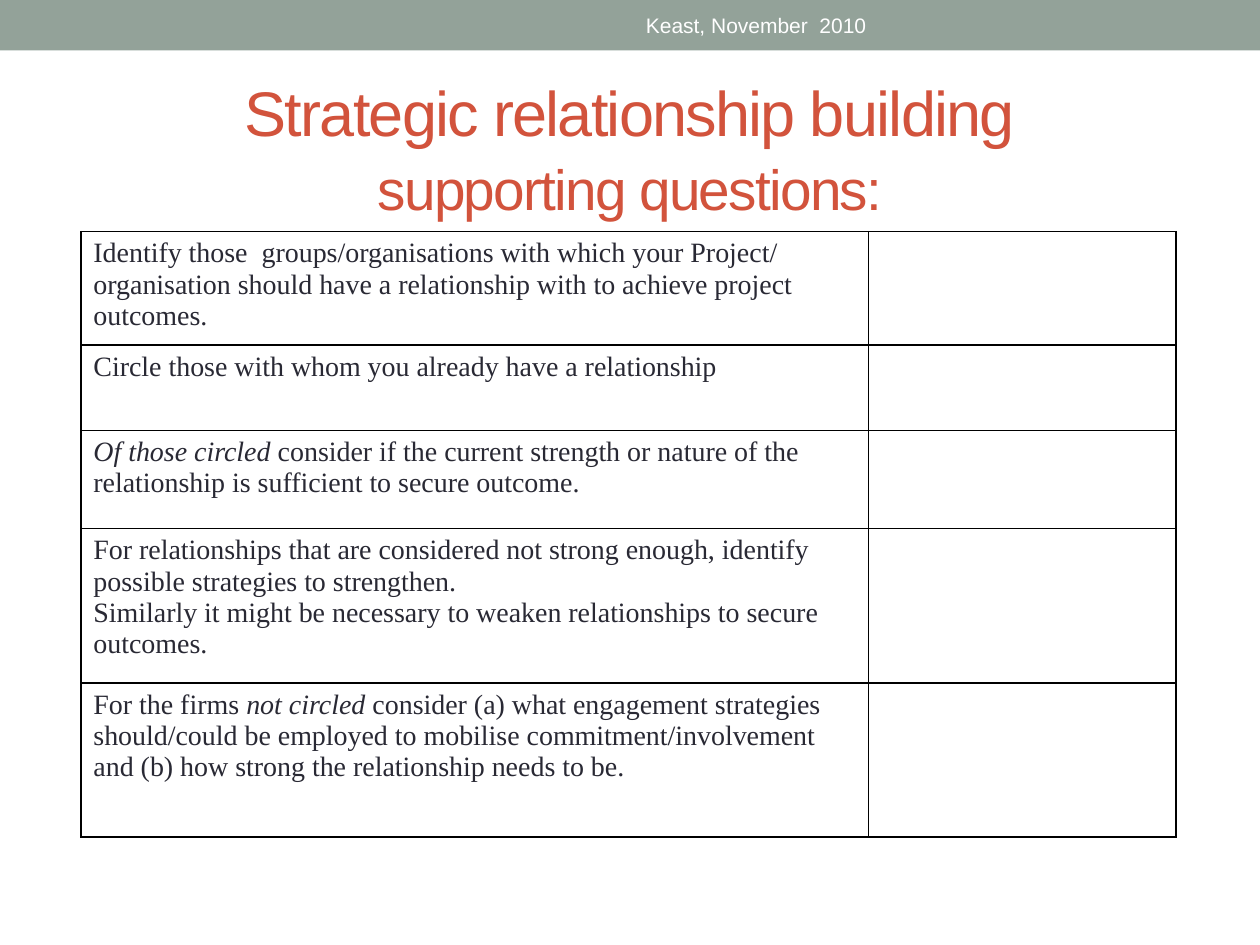
"""Build a slide with a title and a table of relationship building questions."""
import pptx
import pptx.dml.color
import pptx.enum.shapes
import pptx.enum.text
import pptx.util
from lxml import etree

Cm, Pt = pptx.util.Cm, pptx.util.Pt
RGBColor = pptx.dml.color.RGBColor
ANCHOR, ALIGN = pptx.enum.text.MSO_ANCHOR, pptx.enum.text.PP_ALIGN

SAGE = RGBColor(0x93, 0xA2, 0x99)
RUST = RGBColor(0xD2, 0x53, 0x3C)
INK = RGBColor(0x29, 0x29, 0x34)
BLACK = RGBColor(0, 0, 0)
WHITE = RGBColor(0xFF, 0xFF, 0xFF)

FOOTER = [("Keast, November  2010", {})]
TITLE = [
    ("Strategic relationship building", {}),
    ("supporting questions:", {"size": Pt(32.4)}),
]
ITALIC = {"italic": True}
QUESTIONS = [
    [[("Identify those  groups/organisations with which your Project/ organisation "
       "should have a relationship with to achieve project outcomes.", {})]],
    [[("Circle those with whom you already have a relationship", {})]],
    [[("Of those circled", ITALIC),
      (" consider if the current strength or nature of the relationship is "
       "sufficient to secure outcome.", {})]],
    [[("For relationships that are considered not strong enough, identify possible "
       "strategies to strengthen.", {})],
     [("Similarly it might be necessary to weaken relationships to secure outcomes.", {})]],
    [[("For the firms ", {}), ("not circled", ITALIC),
      (" consider (a) what engagement strategies should/could be employed to mobilise "
       "commitment/involvement and (b) how strong the relationship needs to be.", {})]],
]
COLUMN_WIDTHS = [15.88, 6.2]
ROW_HEIGHTS = [2.14, 1.72, 1.98, 3.11, 3.11]

FOOTER_FORMAT = {"name": "Arial", "size": Pt(12), "color": WHITE}
TITLE_FORMAT = {"name": "Arial", "size": Pt(36), "color": RUST}
QUESTION_FORMAT = {"name": "Times New Roman", "size": Pt(16), "color": INK}


def add_run(paragraph, words, formats):
    run = paragraph.add_run()
    run.text = words
    for key, value in formats.items():
        if key == "color":
            run.font.color.rgb = value
        else:
            setattr(run.font, key, value)
    return run


def add_centred_box(slide, left, top, width, height):
    frame = slide.shapes.add_textbox(Cm(left), Cm(top), Cm(width), Cm(height)).text_frame
    frame.word_wrap = True
    frame.vertical_anchor = ANCHOR.MIDDLE
    frame.margin_top = frame.margin_bottom = 0
    frame.paragraphs[0].alignment = ALIGN.CENTER
    return frame.paragraphs[0]


def add_borders(cell):
    properties = cell._tc.get_or_add_tcPr()
    namespace = "http://schemas.openxmlformats.org/drawingml/2006/main"
    for position, side in enumerate(("lnL", "lnR", "lnT", "lnB")):
        line = etree.Element(f"{{{namespace}}}{side}", w=str(Pt(1)))
        fill = etree.SubElement(line, f"{{{namespace}}}solidFill")
        etree.SubElement(fill, f"{{{namespace}}}srgbClr", val=str(BLACK))
        properties.insert(position, line)


def add_questions(slide):
    table = slide.shapes.add_table(
        len(QUESTIONS), len(COLUMN_WIDTHS), Cm(1.63), Cm(4.67),
        Cm(sum(COLUMN_WIDTHS)), Cm(sum(ROW_HEIGHTS))).table
    table.first_row = table.horz_banding = False
    for column, width in zip(table.columns, COLUMN_WIDTHS):
        column.width = Cm(width)
    for row, height, question in zip(table.rows, ROW_HEIGHTS, QUESTIONS):
        row.height = Cm(height)
        for cell in row.cells:
            cell.fill.background()
            add_borders(cell)
        frame = row.cells[0].text_frame
        for number, runs in enumerate(question):
            paragraph = frame.add_paragraph() if number else frame.paragraphs[0]
            for words, formats in runs:
                add_run(paragraph, words, {**QUESTION_FORMAT, **formats})


def main():
    deck = pptx.Presentation()
    deck.slide_width, deck.slide_height = Cm(25.4), Cm(19.05)
    slide = deck.slides.add_slide(deck.slide_layouts[6])

    band = slide.shapes.add_shape(
        pptx.enum.shapes.MSO_SHAPE.RECTANGLE, 0, 0, deck.slide_width, Cm(1.02))
    band.shadow.inherit = False
    band.fill.solid()
    band.fill.fore_color.rgb = SAGE
    band.line.fill.background()

    title = add_centred_box(slide, 1.27, 1.55, 22.86, 2.74)
    title.line_spacing = 1.08
    for number, (words, formats) in enumerate(TITLE):
        if number:
            title.add_line_break()
        run = add_run(title, words, {**TITLE_FORMAT, **formats})
        run.font._element.set("spc", "-100")

    footer = add_centred_box(slide, 9.53, 0.05, 11.43, 0.91)
    for words, formats in FOOTER:
        add_run(footer, words, {**FOOTER_FORMAT, **formats})

    add_questions(slide)
    deck.save("out.pptx")


if __name__ == "__main__":
    main()
